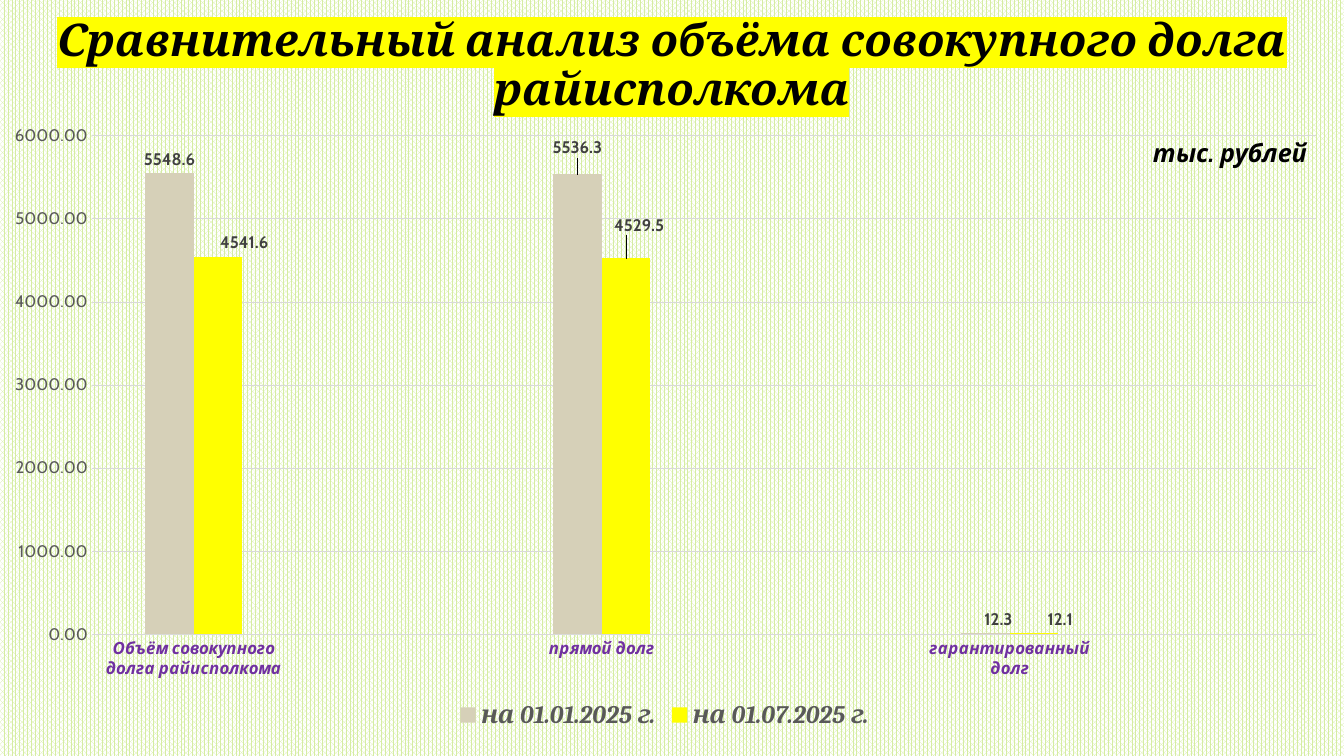
import pptx
import pptx.chart.data
import pptx.dml.color
import pptx.enum.chart
import pptx.enum.dml
import pptx.enum.text
import pptx.oxml
import pptx.oxml.ns
import pptx.util

WIDTH, HEIGHT = pptx.util.Inches(13.33), pptx.util.Inches(7.5)


class Theme:
    heading_font, body_font = "Cambria", "Cabin"
    black, text, label, category = "000000", "595959", "404040", "7030A0"
    grid, highlight = "D9D9D9", "FFFF00"
    pattern, paper = "D5EDA2", "FFFFFF"
    title_size, legend_size, axis_size = 32, 18, 12


CATEGORIES = ["Объём совокупного долга райисполкома", "", "прямой долг", "",
              "гарантированный долг", ""]
# Name, colour, values, and label shifts as shares of the chart's size
SERIES = [
    ("на 01.01.2025 г.", "D6D0B8", [5548.6, None, 5536.3, None, 12.3, None],
     {2: (0, -0.02), 4: (0.01, 0)}),
    ("на 01.07.2025 г.", "FFFF00", [4541.6, None, 4529.5, None, 12.1, None],
     {0: (0.02, 0), 2: (0.01, -0.03), 4: (0.02, 0)}),
]


def rgb(value):
    return pptx.dml.color.RGBColor.from_string(value)


def style_font(font, size, color, name, bold=False, italic=False):
    font.size, font.name = pptx.util.Pt(size), name
    font.bold, font.italic = bold, italic
    font.fill.solid()
    font.fill.fore_color.rgb = rgb(color)


def style_line(line, color):
    line.color.rgb = rgb(color)
    line.width = pptx.util.Pt(0.75)


def layout_xml(**shares):
    parts = "".join(f'<c:{key} val="{value}"/>' for key, value in shares.items())
    return pptx.oxml.parse_xml(
        f'<c:layout {pptx.oxml.ns.nsdecls("c")}><c:manualLayout>{parts}'
        "</c:manualLayout></c:layout>")


def paint_background(page):
    fill = page.background.fill
    fill.patterned()
    fill.pattern = pptx.enum.dml.MSO_PATTERN.PERCENT_75
    fill.fore_color.rgb = rgb(Theme.pattern)
    fill.back_color.rgb = rgb(Theme.paper)


def add_title(page, text):
    box = page.shapes.add_textbox(0, 0, WIDTH, int(HEIGHT * 0.176))
    frame = box.text_frame
    frame.word_wrap = True
    frame.vertical_anchor = pptx.enum.text.MSO_ANCHOR.MIDDLE
    frame.text = text
    para = frame.paragraphs[0]
    para.alignment = pptx.enum.text.PP_ALIGN.CENTER
    para.line_spacing = 0.9
    span = para.runs[0]
    style_font(span.font, Theme.title_size, Theme.black, Theme.heading_font, True, True)
    # Marker behind the words
    marker = pptx.oxml.parse_xml(
        f'<a:highlight {pptx.oxml.ns.nsdecls("a")}>'
        f'<a:srgbClr val="{Theme.highlight}"/></a:highlight>')
    span.font.fill.fore_color.rgb = rgb(Theme.black)
    span._r.rPr.find(pptx.oxml.ns.qn("a:solidFill")).addnext(marker)


def style_axes(chart):
    no_ticks = pptx.enum.chart.XL_TICK_MARK.NONE
    names, values = chart.category_axis, chart.value_axis
    for axis in (names, values):
        axis.major_tick_mark = axis.minor_tick_mark = no_ticks
    style_font(names.tick_labels.font, Theme.axis_size, Theme.category,
               Theme.body_font, True, True)
    style_line(names.format.line, Theme.grid)
    style_font(values.tick_labels.font, Theme.axis_size, Theme.text, Theme.body_font)
    values.tick_labels.number_format = "0.00"
    values.tick_labels.number_format_is_linked = False
    values.minimum_scale, values.maximum_scale, values.major_unit = 0, 6000, 1000
    values.format.line.fill.background()
    style_line(values.major_gridlines.format.line, Theme.grid)


def style_series(series, color, shifts):
    outside = pptx.enum.chart.XL_LABEL_POSITION.OUTSIDE_END
    series.format.fill.solid()
    series.format.fill.fore_color.rgb = rgb(color)
    labels = series.data_labels
    labels.show_value = True
    labels.position = outside
    style_font(labels.font, Theme.axis_size, Theme.label, Theme.body_font, True)
    for index, (x, y) in shifts.items():
        label = series.points[index].data_label
        style_font(label.font, Theme.axis_size, Theme.label, Theme.body_font, True)
        label.position = outside
        mark = series._element.xpath(f"c:dLbls/c:dLbl/c:idx[@val='{index}']")[0]
        mark.addnext(layout_xml(x=x, y=y))


def add_unit(chart, text):
    frame = chart.chart_title.text_frame
    frame.text = text
    style_font(frame.paragraphs[0].runs[0].font, Theme.legend_size, Theme.black,
               Theme.body_font, True, True)
    title = chart.chart_title._element
    for old in title.xpath("c:layout"):
        title.remove(old)
    title.xpath("c:tx")[0].addnext(
        layout_xml(xMode="edge", yMode="edge", x=0.87, y=0.02))
    chart.chart_title.include_in_layout = True


def add_debt_chart(page):
    data = pptx.chart.data.CategoryChartData(number_format="0.0")
    data.categories = CATEGORIES
    for name, _, values, _ in SERIES:
        data.add_series(name, values)
    frame = page.shapes.add_chart(
        pptx.enum.chart.XL_CHART_TYPE.COLUMN_CLUSTERED, int(WIDTH * 0.008),
        int(HEIGHT * 0.157), int(WIDTH * 0.973), int(HEIGHT * 0.815), data)
    chart = frame.chart
    style_font(chart.font, 10, Theme.black, Theme.body_font)
    plot = chart.plots[0]
    plot.gap_width, plot.overlap, plot.vary_by_categories = 219, 0, False
    for series, (_, color, _, shifts) in zip(plot.series, SERIES):
        style_series(series, color, shifts)
    style_axes(chart)
    add_unit(chart, "тыс. рублей")
    # Legend under the columns
    chart.has_legend = True
    chart.legend.position = pptx.enum.chart.XL_LEGEND_POSITION.BOTTOM
    chart.legend.include_in_layout = False
    style_font(chart.legend.font, Theme.legend_size, Theme.text,
               Theme.heading_font, True, True)
    # Fixed plot area
    area = chart._chartSpace.xpath("c:chart/c:plotArea")[0]
    for old in area.xpath("c:layout"):
        area.remove(old)
    area.insert(0, layout_xml(layoutTarget="inner", xMode="edge", yMode="edge",
                              x=0.062, y=0.028, w=0.936, h=0.809))


def main():
    deck = pptx.Presentation()
    deck.slide_width, deck.slide_height = WIDTH, HEIGHT
    page = deck.slides.add_slide(deck.slide_layouts[6])
    paint_background(page)
    add_title(page, "Сравнительный анализ объёма совокупного долга райисполкома")
    add_debt_chart(page)
    deck.save("out.pptx")


if __name__ == "__main__":
    main()
